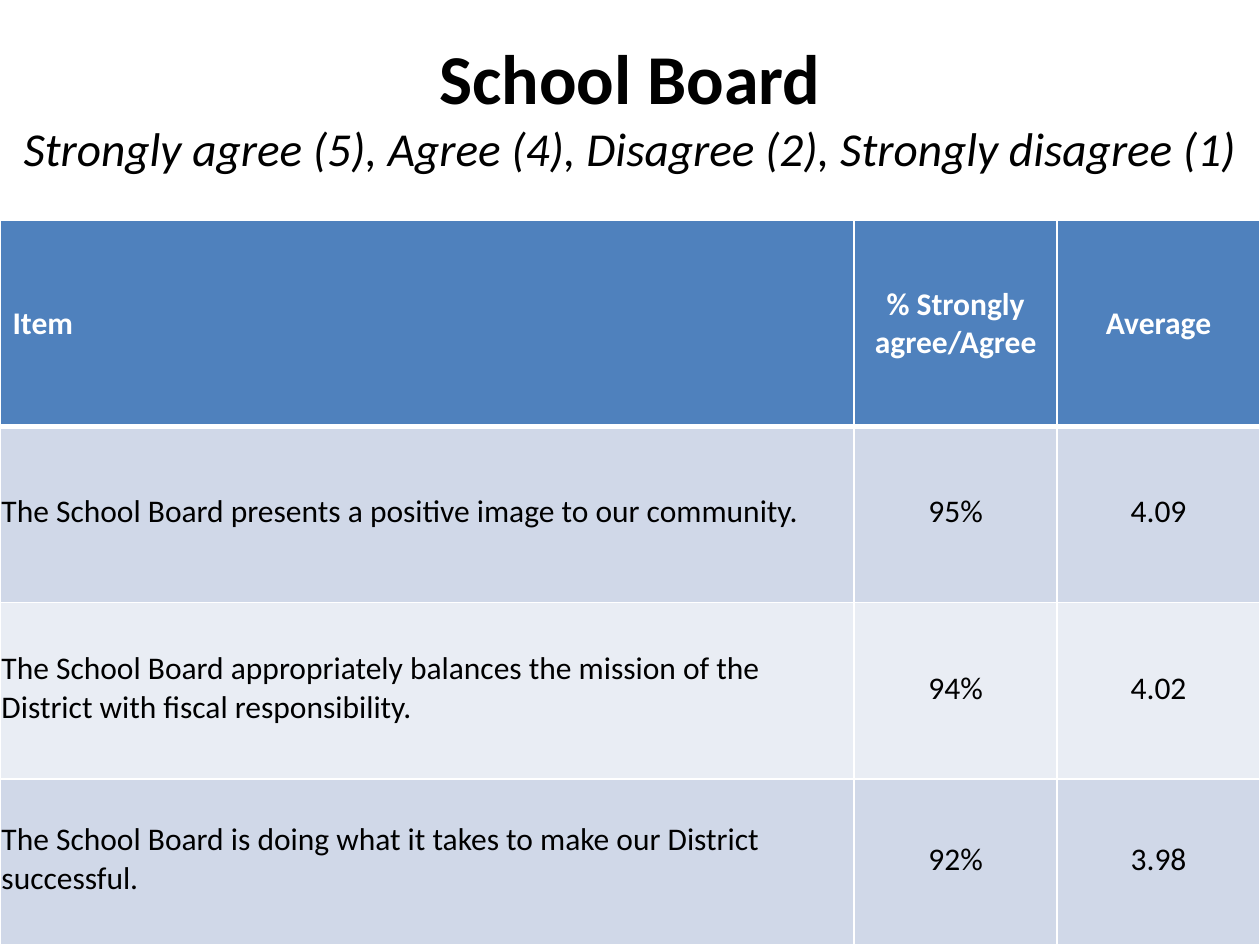
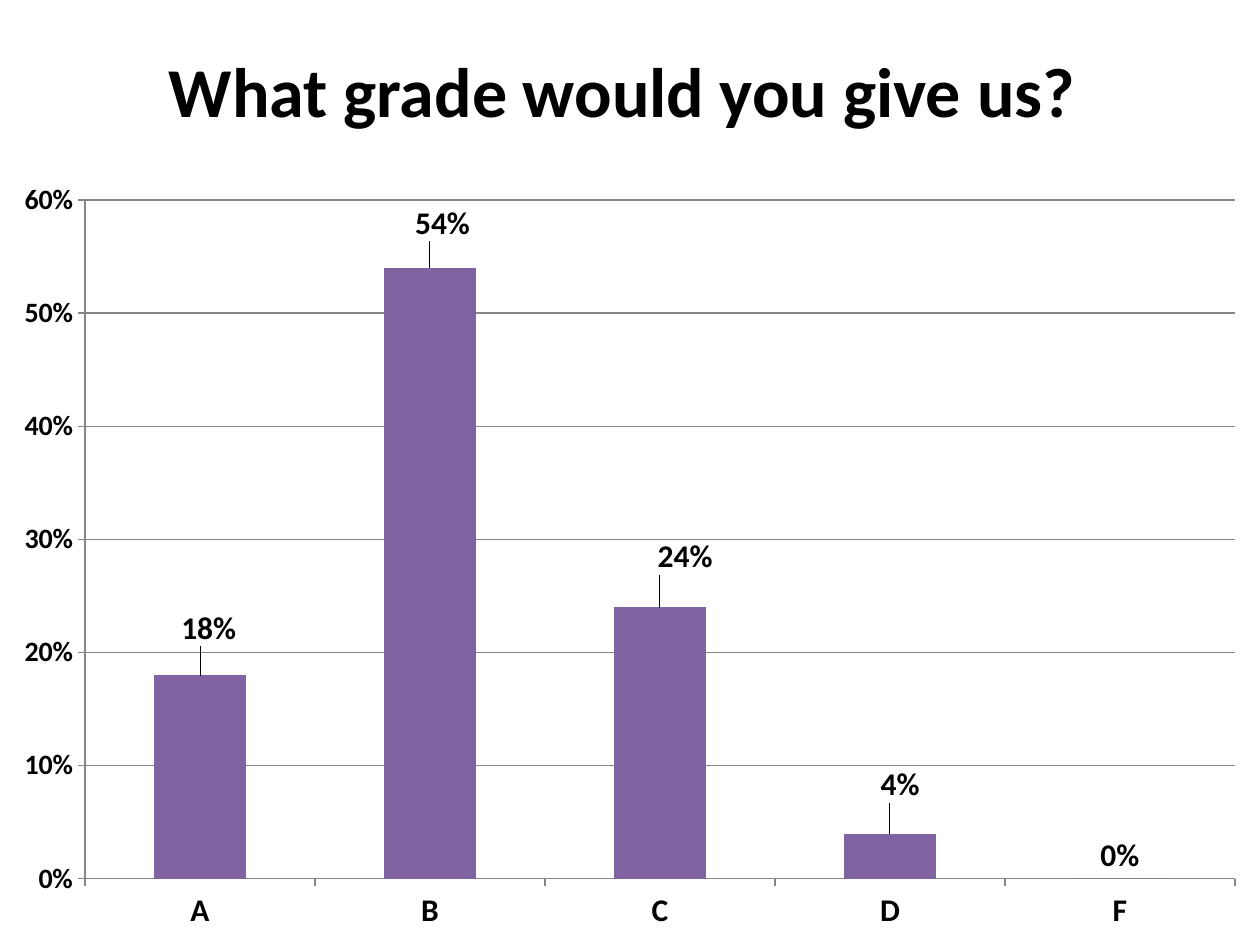
import pptx
import pptx.chart.data
import pptx.dml.color
import pptx.enum.chart
import pptx.enum.text
import pptx.oxml
import pptx.oxml.ns
import pptx.util

Cm, Pt = pptx.util.Cm, pptx.util.Pt
ALIGN = pptx.enum.text.PP_ALIGN
MIDDLE = pptx.enum.text.MSO_ANCHOR.MIDDLE

# Content
BOARD_TITLE = "School Board"
SCALE = "Strongly agree (5), Agree (4), Disagree (2), Strongly disagree (1)"
RATINGS = [
    ("Item", "% Strongly agree/Agree", "Average"),
    ("The School Board presents a positive image to our community.", "95%", "4.09"),
    ("The School Board appropriately balances the mission of the District "
     "with fiscal responsibility.", "94%", "4.02"),
    ("The School Board is doing what it takes to make our District successful.",
     "92%", "3.98"),
]
GRADE_TITLE = "What grade would you give us? "
GRADES = {"A": 0.18, "B": 0.54, "C": 0.24, "D": 0.04, "F": 0}
# Shift of a value label from its usual place, as shares of the chart size
LABEL_SHIFTS = [(0.007, -0.03), (0.01, -0.027), (0.02, -0.035), (0.008, -0.032)]

# Look
FONT = "Calibri"
COLORS = {
    "text": "000000", "white": "FFFFFF", "header": "4F81BD",
    "odd row": "D0D8E8", "even row": "E9EDF4", "bar": "8064A2", "axis": "868686",
}
SLIDE_W, SLIDE_H = Cm(25.4), Cm(19.05)
TABLE_TOP, CHART_TOP = Cm(4.45), Cm(3.39)
COLUMN_WIDTHS = [Cm(17.22), Cm(4.09), Cm(4.09)]
ROW_HEIGHTS = [Cm(4.15), Cm(3.55), Cm(3.55), Cm(3.35)]


def rgb(name):
    return pptx.dml.color.RGBColor.from_string(COLORS[name])


def style(font, size, color="text", bold=False, italic=False):
    font.name, font.size = FONT, Pt(size)
    font.bold, font.italic = bold, italic
    font.color.rgb = rgb(color)


def write(frame, text, align=ALIGN.CENTER, new_line=False, **look):
    """Add a run to the first paragraph of a frame, after a line break if asked."""
    paragraph = frame.paragraphs[0]
    paragraph.alignment = align
    if new_line:
        paragraph.add_line_break()
    run = paragraph.add_run()
    run.text = text
    style(run.font, **look)


def add_titled_slide(deck, text, height):
    slide = deck.slides.add_slide(deck.slide_layouts[5])
    title = slide.shapes.title
    title.left, title.top, title.width, title.height = 0, 0, SLIDE_W, height
    frame = title.text_frame
    frame.auto_size = pptx.enum.text.MSO_AUTO_SIZE.NONE
    frame.vertical_anchor = MIDDLE
    write(frame, text, size=40, bold=True)
    return slide


def set_borders(cell, **widths):
    """Draw white borders; the keys are L, R, T and B, in that order."""
    properties = cell._tc.get_or_add_tcPr()
    for place, (side, width) in enumerate(widths.items()):
        properties.insert(place, pptx.oxml.parse_xml(
            f'<a:ln{side} {pptx.oxml.ns.nsdecls("a")} w="{Pt(width)}"><a:solidFill>'
            f'<a:srgbClr val="{COLORS["white"]}"/></a:solidFill></a:ln{side}>'))


def manual_layout(x, y, size=None):
    """Give a chart layout: an offset, or an inner plot area if it has a size."""
    tags = {"x": x, "y": y}
    if size:
        tags = {"layoutTarget": "inner", "xMode": "edge", "yMode": "edge",
                **tags, "w": size[0], "h": size[1]}
    inside = "".join(f'<c:{tag} val="{value}"/>' for tag, value in tags.items())
    return pptx.oxml.parse_xml(
        f'<c:layout {pptx.oxml.ns.nsdecls("c")}><c:manualLayout>{inside}'
        f'</c:manualLayout></c:layout>')


def add_ratings(slide):
    table = slide.shapes.add_table(
        len(RATINGS), len(COLUMN_WIDTHS), 0, TABLE_TOP,
        SLIDE_W, sum(ROW_HEIGHTS)).table
    for column, width in zip(table.columns, COLUMN_WIDTHS):
        column.width = width
    for r, (texts, height) in enumerate(zip(RATINGS, ROW_HEIGHTS)):
        table.rows[r].height = height
        header = r == 0
        fill = "header" if header else "odd row" if r % 2 else "even row"
        for c, text in enumerate(texts):
            cell = table.cell(r, c)
            cell.vertical_anchor = MIDDLE
            cell.fill.solid()
            cell.fill.fore_color.rgb = rgb(fill)
            if not header:
                cell.margin_left = cell.margin_right = cell.margin_top = Cm(0.03)
                cell.margin_bottom = Cm(0.13)
            set_borders(cell, L=1, R=1, T=3 if r == 1 else 1, B=3 if header else 1)
            write(cell.text_frame, text, size=18, bold=header,
                  color="white" if header else "text",
                  align=ALIGN.CENTER if c else ALIGN.LEFT)


def add_grades(slide):
    data = pptx.chart.data.CategoryChartData(number_format="0%")
    data.categories = list(GRADES)
    data.add_series("Series 1", list(GRADES.values()))
    chart = slide.shapes.add_chart(
        pptx.enum.chart.XL_CHART_TYPE.COLUMN_CLUSTERED, 0, CHART_TOP,
        SLIDE_W, SLIDE_H - CHART_TOP, data).chart
    chart.has_title = chart.has_legend = False
    style(chart.font, 18)

    categories, values = chart.category_axis, chart.value_axis
    for axis, size in ((categories, 18), (values, 16)):
        style(axis.tick_labels.font, size, bold=True)
        axis.major_tick_mark = pptx.enum.chart.XL_TICK_MARK.OUTSIDE
        axis.format.line.color.rgb = rgb("axis")
    values.minimum_scale, values.maximum_scale, values.major_unit = 0, 0.6, 0.1
    values.tick_labels.number_format = "0%"
    values.tick_labels.number_format_is_linked = False
    values.has_major_gridlines = True
    values.major_gridlines.format.line.color.rgb = rgb("axis")

    plot = chart.plots[0]
    plot.gap_width, plot.vary_by_categories = 150, False
    bars = plot.series[0]
    bars.format.fill.solid()
    bars.format.fill.fore_color.rgb = rgb("bar")
    above = pptx.enum.chart.XL_LABEL_POSITION.OUTSIDE_END
    labels = bars.data_labels
    labels.show_value, labels.position = True, above
    labels.number_format, labels.number_format_is_linked = "0%", False
    style(labels.font, 18, bold=True)
    for i, shift in enumerate(LABEL_SHIFTS):
        label = bars.points[i].data_label
        label.position = above
        style(label.font, 18, bold=True)
    for index, shift in zip(chart._chartSpace.xpath(".//c:dLbl/c:idx"), LABEL_SHIFTS):
        index.addnext(manual_layout(*shift))

    area = chart._chartSpace.xpath(".//c:plotArea")[0]
    for automatic in area.xpath("c:layout"):
        area.remove(automatic)
    area.insert(0, manual_layout(0.0675, 0.041, size=(0.9127, 0.874)))


def main():
    deck = pptx.Presentation()
    deck.slide_width, deck.slide_height = SLIDE_W, SLIDE_H

    board = add_titled_slide(deck, BOARD_TITLE, Cm(4.24))
    write(board.shapes.title.text_frame, SCALE, new_line=True, size=27, italic=True)
    add_ratings(board)

    add_grades(add_titled_slide(deck, GRADE_TITLE, Cm(3.6)))
    deck.save("out.pptx")


if __name__ == "__main__":
    main()
